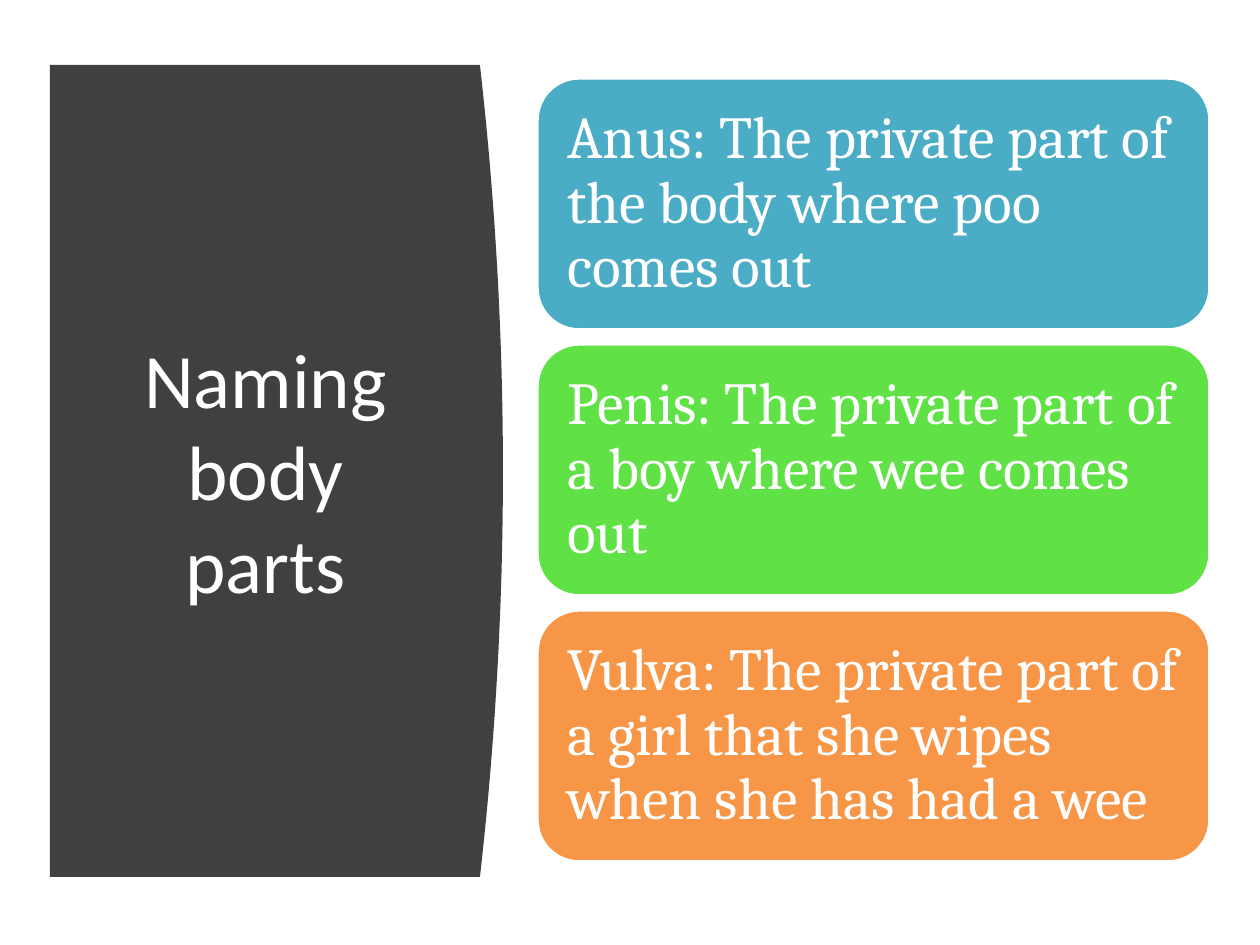
from pptx import Presentation
from pptx.dml.color import RGBColor
from pptx.enum.shapes import MSO_SHAPE
from pptx.enum.text import MSO_ANCHOR, PP_ALIGN
from pptx.util import Inches, Pt

ROUNDED = MSO_SHAPE.ROUNDED_RECTANGLE
MIDDLE = MSO_ANCHOR.MIDDLE
CENTER, LEFT = PP_ALIGN.CENTER, PP_ALIGN.LEFT
PX_PER_INCH = 126
TITLE_ONLY = 5


def px(length):
    return round(length * Inches(1) / PX_PER_INCH)


def color(hex_code):
    return RGBColor.from_string(hex_code)


class SlideBuilder:
    heading_font, body_font = "Calibri", "Cambria"
    heading_size, body_size = 44, 34
    white, dark = "FFFFFF", "404040"

    def __init__(self, slide):
        self.slide = slide

    def set_text(self, shape, text, font, size, align, spacing=None):
        frame = shape.text_frame
        frame.text = text
        frame.word_wrap = True
        frame.vertical_anchor = MIDDLE
        paragraph = frame.paragraphs[0]
        paragraph.alignment = align
        paragraph.line_spacing = spacing
        paragraph.font.name = font
        paragraph.font.size = Pt(size)
        paragraph.font.color.rgb = color(self.white)

    def title(self, text, left, top, width, height):
        heading = self.slide.shapes.title
        heading.left, heading.top = px(left), px(top)
        heading.width, heading.height = px(width), px(height)
        self.set_text(heading, text, self.heading_font, self.heading_size,
                      CENTER)

    def curved_panel(self, left, top, right, bottom, bulge, steps=40):
        """Panel whose right edge bows outward as a parabola."""
        edge = []
        for step in range(steps + 1):
            u = 2 * step / steps - 1
            y = top + (bottom - top) * step / steps
            edge.append((px(right + bulge * (1 - u * u)), px(y)))
        builder = self.slide.shapes.build_freeform(px(left), px(top))
        builder.add_line_segments(edge + [(px(left), px(bottom))], close=True)
        panel = builder.convert_to_shape()
        panel.shadow.inherit = False
        panel.fill.solid()
        panel.fill.fore_color.rgb = color(self.dark)
        panel.line.fill.background()
        # Send the panel behind the title
        self.slide.shapes._spTree.insert(2, panel._element)

    def card(self, text, fill, left, top, width, height, inset=18):
        card = self.slide.shapes.add_shape(
            ROUNDED, px(left), px(top), px(width), px(height))
        card.shadow.inherit = False
        card.fill.solid()
        card.fill.fore_color.rgb = color(fill)
        card.line.color.rgb = color(self.white)
        card.line.width = Pt(2)
        frame = card.text_frame
        frame.margin_left = frame.margin_right = px(inset)
        frame.margin_top = frame.margin_bottom = px(inset)
        self.set_text(card, text, self.body_font, self.body_size, LEFT, 0.9)


def main():
    deck = Presentation()
    deck.slide_width, deck.slide_height = Inches(10), Inches(7.5)
    builder = SlideBuilder(
        deck.slides.add_slide(deck.slide_layouts[TITLE_ONLY]))

    # Title on the dark panel
    builder.curved_panel(50, 65, 480, 877, bulge=23)
    builder.title("Naming body parts", 89, 140, 353, 660)

    # Definition cards
    definitions = [
        ("Anus: The private part of the body where poo comes out", "4BACC6"),
        ("Penis: The private part of a boy where wee comes out", "60E146"),
        ("Vulva: The private part of a girl that she wipes "
         "when she has had a wee", "F79646"),
    ]
    first_top, pitch = 78, 266
    for row, (definition, fill) in enumerate(definitions):
        builder.card(definition, fill, 537, first_top + row * pitch, 673, 252)

    deck.save("out.pptx")


if __name__ == "__main__":
    main()
